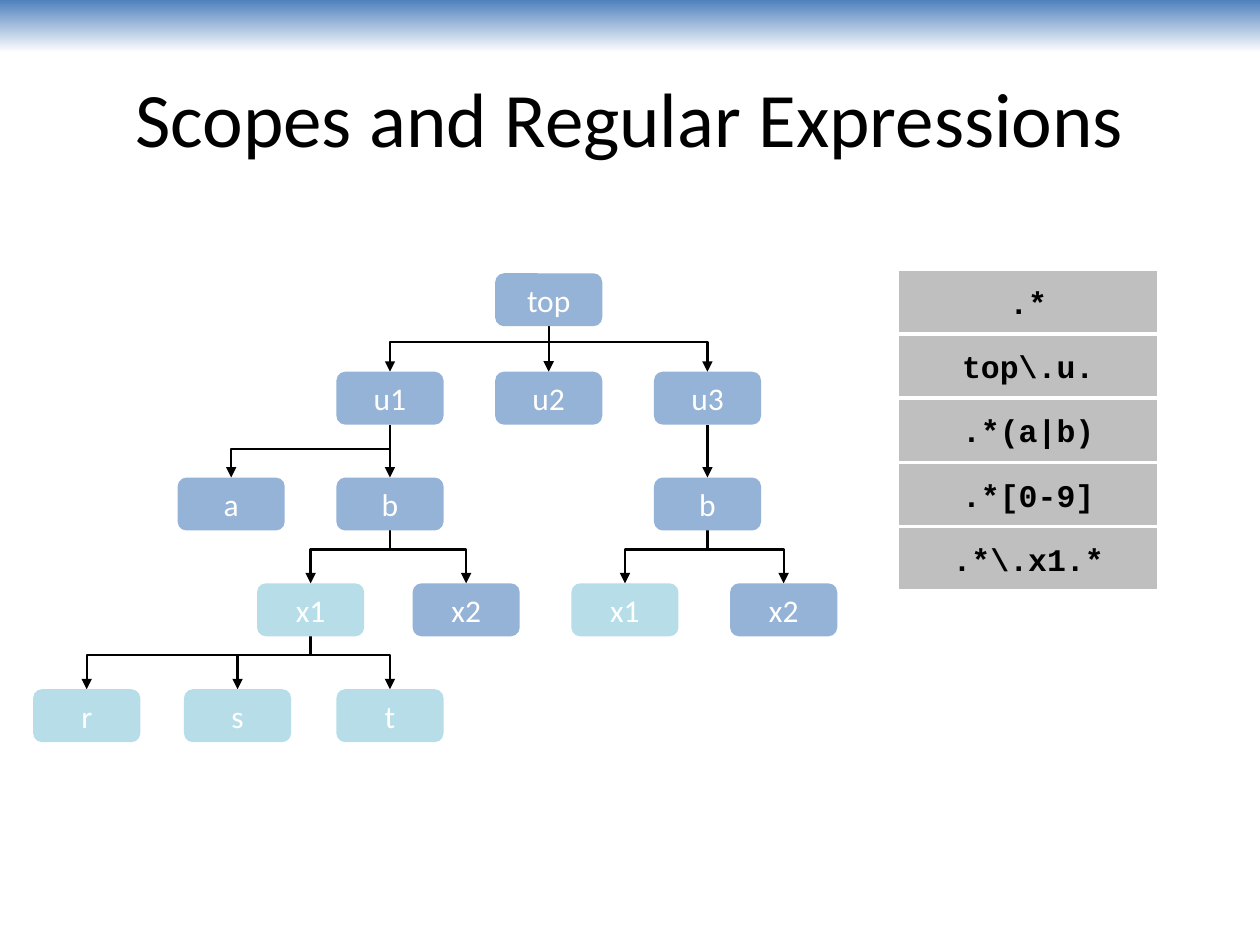
from dataclasses import dataclass

from pptx import Presentation
from pptx import util as u
from pptx.dml import color
from pptx.enum import shapes, text
from pptx.oxml import ns
from lxml import etree

COLORS = {
    "banner": "4F81BD",
    "scope": "95B3D7",
    "matched": "B7DEE8",
    "expression": "BFBFBF",
    "white": "FFFFFF",
    "black": "000000",
}
SLIDE_WIDTH, SLIDE_HEIGHT = 10, 7.5
COLUMN_STEP, ROW_STEP = 1.26, 0.84
TREE_LEFT, TREE_TOP = 0.15, 2.11
NODE_WIDTH, NODE_HEIGHT = 0.85, 0.42
EXPRESSION_LEFT, EXPRESSION_TOP = 7.12, 2.14
EXPRESSION_WIDTH, EXPRESSION_HEIGHT = 2.08, 0.51


@dataclass(frozen=True)
class Node:
    scope: str
    column: float
    row: float
    bend: float = 0.36

    @property
    def parent(self) -> str:
        return self.scope.rpartition(".")[0]

    @property
    def label(self) -> str:
        return self.scope.rpartition(".")[2]

    @property
    def left(self) -> float:
        return TREE_LEFT + self.column * COLUMN_STEP

    @property
    def top(self) -> float:
        return TREE_TOP + self.row * ROW_STEP

    @property
    def center(self) -> float:
        return self.left + NODE_WIDTH / 2

    @property
    def fill(self) -> str:
        return "matched" if ".x1" in self.scope else "scope"


NODES = [
    Node("top", 3, 0.07, 0.34),
    Node("top.u1", 2, 1, 0.46),
    Node("top.u2", 3, 1),
    Node("top.u3", 4, 1),
    Node("top.u1.a", 1, 2),
    Node("top.u1.b", 2, 2),
    Node("top.u3.b", 4, 2),
    Node("top.u1.b.x1", 1.5, 3),
    Node("top.u1.b.x2", 2.48, 3),
    Node("top.u3.b.x1", 3.48, 3),
    Node("top.u3.b.x2", 4.48, 3),
    Node("top.u1.b.x1.r", 0.09, 4),
    Node("top.u1.b.x1.s", 1.04, 4),
    Node("top.u1.b.x1.t", 2, 4),
]
EXPRESSIONS = [".*", r"top\.u.", ".*(a|b)", ".*[0-9]", r".*\.x1.*"]


def rgb(name: str) -> color.RGBColor:
    return color.RGBColor.from_string(COLORS[name])


def write(shape, content: str, size: float, font_name: str, font_color: str, bold: bool = False) -> None:
    frame = shape.text_frame
    frame.text = content
    frame.word_wrap = True
    frame.vertical_anchor = text.MSO_ANCHOR.MIDDLE
    paragraph = frame.paragraphs[0]
    paragraph.alignment = text.PP_ALIGN.CENTER
    font = paragraph.runs[0].font
    font.size, font.name, font.bold = u.Pt(size), font_name, bold
    font.color.rgb = rgb(font_color)


def add_box(slide, kind, left: float, top: float, width: float, height: float):
    shape = slide.shapes.add_shape(kind, *map(u.Inches, (left, top, width, height)))
    shape.shadow.inherit = False
    shape.line.fill.background()
    return shape


def add_banner(slide) -> None:
    banner = add_box(slide, shapes.MSO_SHAPE.RECTANGLE, 0, 0, SLIDE_WIDTH, SLIDE_HEIGHT * 0.056)
    banner.fill.gradient()
    banner.fill.gradient_angle = 270
    for stop, name, position in zip(banner.fill.gradient_stops, ("banner", "white"), (0, 1)):
        stop.color.rgb = rgb(name)
        stop.position = position


def add_title(slide) -> None:
    bounds = (SLIDE_WIDTH * 0.05, SLIDE_HEIGHT * 0.04, SLIDE_WIDTH * 0.9, SLIDE_HEIGHT / 6)
    title = slide.shapes.add_textbox(*map(u.Inches, bounds))
    write(title, "Scopes and Regular Expressions", 44, "Calibri", "black")


def add_arrow(slide, parent: Node, child: Node) -> None:
    start_y, end_y = parent.top + NODE_HEIGHT, child.top
    shift, drop = child.center - parent.center, end_y - start_y
    straight = abs(shift) < 0.01
    if straight:
        kind = shapes.MSO_CONNECTOR.STRAIGHT
        ends = (parent.center, start_y, child.center, end_y)
    else:
        kind = shapes.MSO_CONNECTOR.ELBOW
        middle_x, middle_y = (parent.center + child.center) / 2, (start_y + end_y) / 2
        half_width = drop / 2 if shift < 0 else -drop / 2
        half_height = abs(shift) / 2
        ends = (middle_x - half_width, middle_y - half_height,
                middle_x + half_width, middle_y + half_height)
    connector = slide.shapes.add_connector(kind, *map(u.Inches, ends))
    connector.line.color.rgb = rgb("black")
    connector.line.width = u.Pt(1.25)
    properties = connector._element.spPr
    if not straight:
        properties.find(ns.qn("a:xfrm")).set("rot", "5400000" if shift < 0 else "16200000")
        adjustments = properties.find(ns.qn("a:prstGeom")).get_or_add_avLst()
        etree.SubElement(adjustments, ns.qn("a:gd"), name="adj1", fmla=f"val {round(parent.bend * 100000)}")
    etree.SubElement(properties.find(ns.qn("a:ln")), ns.qn("a:tailEnd"), type="triangle")
    etree.SubElement(properties, ns.qn("a:effectLst"))


def add_node(slide, node: Node) -> None:
    shape = add_box(slide, shapes.MSO_SHAPE.ROUNDED_RECTANGLE, node.left, node.top, NODE_WIDTH, NODE_HEIGHT)
    shape.fill.solid()
    shape.fill.fore_color.rgb = rgb(node.fill)
    write(shape, node.label, 18, "Calibri", "white")


def add_expression(slide, index: int, expression: str) -> None:
    top = EXPRESSION_TOP + index * EXPRESSION_HEIGHT
    shape = add_box(slide, shapes.MSO_SHAPE.RECTANGLE, EXPRESSION_LEFT, top, EXPRESSION_WIDTH, EXPRESSION_HEIGHT)
    shape.fill.solid()
    shape.fill.fore_color.rgb = rgb("expression")
    shape.line.color.rgb = rgb("white")
    shape.line.width = u.Pt(2)
    write(shape, expression, 18, "Courier New", "black", bold=True)


def main() -> None:
    presentation = Presentation()
    presentation.slide_width = u.Inches(SLIDE_WIDTH)
    presentation.slide_height = u.Inches(SLIDE_HEIGHT)
    slide = presentation.slides.add_slide(presentation.slide_layouts[6])
    add_banner(slide)
    add_title(slide)
    by_scope = {node.scope: node for node in NODES}
    for node in NODES:
        if node.parent:
            add_arrow(slide, by_scope[node.parent], node)
    for node in NODES:
        add_node(slide, node)
    for index, expression in enumerate(EXPRESSIONS):
        add_expression(slide, index, expression)
    presentation.save("out.pptx")


if __name__ == "__main__":
    main()
